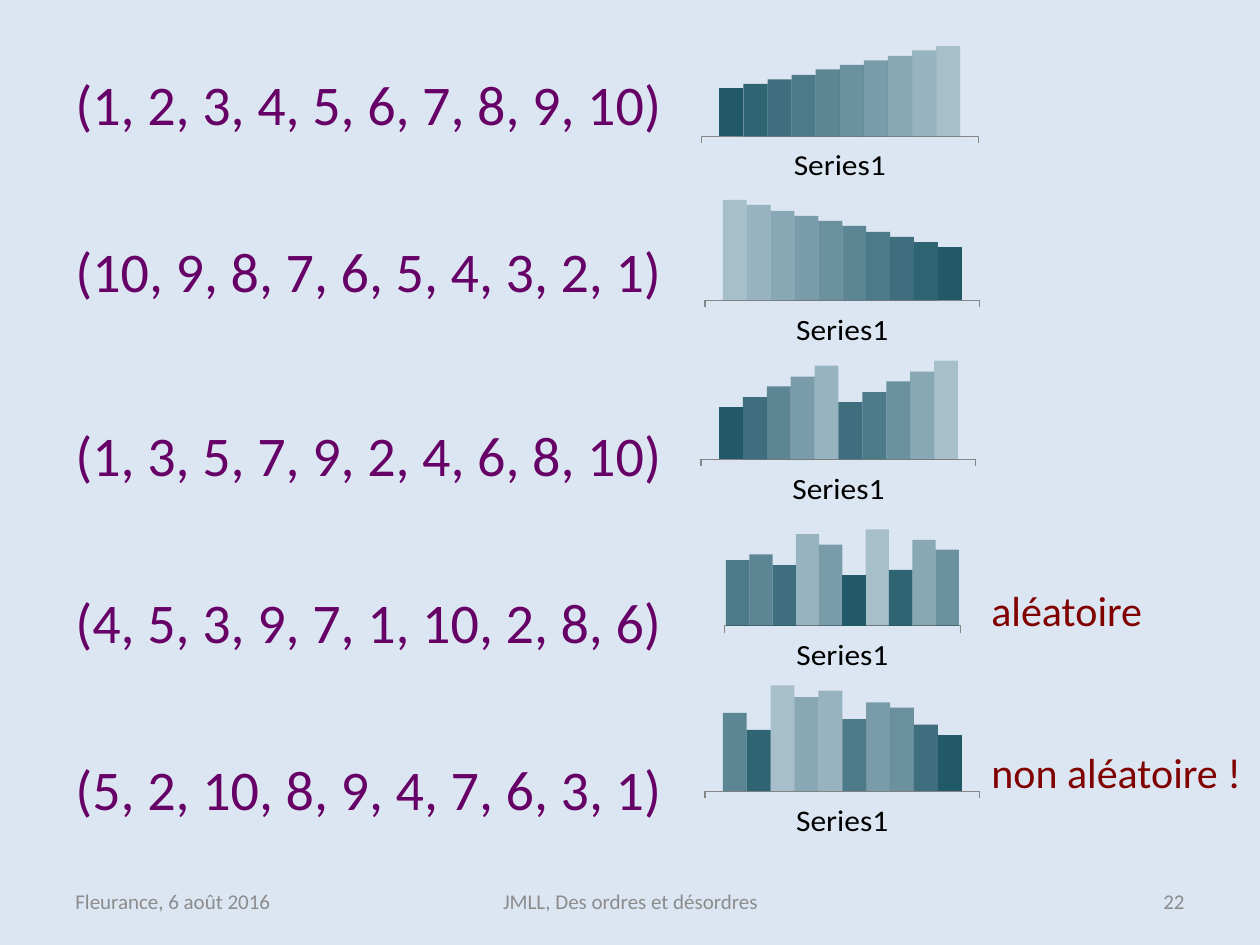
from lxml import etree
from pptx import Presentation
from pptx.chart.data import CategoryChartData
from pptx.dml.color import RGBColor
from pptx.enum.chart import XL_CHART_TYPE, XL_TICK_MARK
from pptx.enum.text import MSO_ANCHOR, PP_ALIGN
from pptx.oxml.ns import qn
from pptx.util import Inches, Pt

COLUMNS = XL_CHART_TYPE.COLUMN_CLUSTERED
TICK_OUT, TICK_NONE = XL_TICK_MARK.OUTSIDE, XL_TICK_MARK.NONE
TOP, MIDDLE = MSO_ANCHOR.TOP, MSO_ANCHOR.MIDDLE
LEFT, CENTER, RIGHT = PP_ALIGN.LEFT, PP_ALIGN.CENTER, PP_ALIGN.RIGHT

FONT = "Calibri"
PALE_BLUE, TEAL, AXIS_GRAY = "DCE6F2", "215968", "868686"
PURPLE, DARK_RED, FOOTER_GRAY, BLACK = "660066", "800000", "8C8C8C", "000000"

# Bar height for each rank from 1 to 10
HEIGHTS = [53, 58, 63, 68, 74, 79, 84, 89, 95, 100]

# Ranks, space above the line of text (points), chart position and size, gap width
ORDERS = [
    ([1, 2, 3, 4, 5, 6, 7, 8, 9, 10], 0, (5.44, 0.28, 2.33, 1.17), 150),
    ([10, 9, 8, 7, 6, 5, 4, 3, 2, 1], 57, (5.47, 1.54, 2.31, 1.22), 150),
    ([1, 3, 5, 7, 9, 2, 4, 6, 8, 10], 67, (5.44, 2.77, 2.31, 1.25), 150),
    ([4, 5, 3, 9, 7, 1, 10, 2, 8, 6], 57, (5.64, 4.11, 1.99, 1.23), 16),
    ([5, 2, 10, 8, 9, 4, 7, 6, 3, 1], 57, (5.47, 5.34, 2.31, 1.32), 150),
]


def color(value):
    return RGBColor.from_string(value)


def add_text(page, position, lines, size, ink, spaces=(0,), align=LEFT,
             anchor=TOP, wrap=True):
    """Add a text box; spaces holds the points above each line."""
    box = page.shapes.add_textbox(*map(Inches, position))
    frame = box.text_frame
    frame.word_wrap = wrap
    frame.vertical_anchor = anchor
    for index, (line, space) in enumerate(zip(lines, spaces)):
        para = frame.add_paragraph() if index else frame.paragraphs[0]
        para.alignment = align
        para.space_before = Pt(space)
        span = para.add_run()
        span.text = line
        span.font.name = FONT
        span.font.size = Pt(size)
        span.font.color.rgb = color(ink)


def fill_series(series, opacity):
    """Fill a series in teal with an opacity in percent."""
    fill = series.format.fill
    fill.solid()
    fill.fore_color.rgb = color(TEAL)
    if opacity < 100:
        for tint in series._element.iter(qn("a:srgbClr")):
            etree.SubElement(tint, qn("a:alpha"), val=str(opacity * 1000))


def place_plot(chart, **fractions):
    """Fix the inner plot area by fractions of the chart frame."""
    area = chart._chartSpace.chart.plotArea
    for old in area.findall(qn("c:layout")):
        area.remove(old)
    layout = etree.Element(qn("c:layout"))
    manual = etree.SubElement(layout, qn("c:manualLayout"))
    settings = {"layoutTarget": "inner", "xMode": "edge", "yMode": "edge", **fractions}
    for name, value in settings.items():
        etree.SubElement(manual, qn("c:" + name), val=str(value))
    area.insert(0, layout)


def add_rank_chart(page, position, ranks, gap, opacities, top, height):
    data = CategoryChartData()
    data.categories = ["Series1"]
    for number, rank in enumerate(ranks, 1):
        data.add_series(f"Series {number}", [HEIGHTS[rank - 1]])
    chart = page.shapes.add_chart(COLUMNS, *map(Inches, position), data).chart
    chart.has_title = False
    chart.has_legend = False
    chart.font.name = FONT
    chart.font.size = Pt(18)
    chart.font.color.rgb = color(BLACK)

    plot = chart.plots[0]
    plot.vary_by_categories = False
    plot.gap_width = gap
    plot.overlap = 0
    for series, opacity in zip(plot.series, opacities):
        fill_series(series, opacity)

    values = chart.value_axis
    values.minimum_scale, values.maximum_scale = 0, 100
    values.has_major_gridlines = False
    values.visible = False
    names = chart.category_axis
    names.major_tick_mark, names.minor_tick_mark = TICK_OUT, TICK_NONE
    names.format.line.color.rgb = color(AXIS_GRAY)
    names.format.line.width = Pt(0.75)
    place_plot(chart, x=0.054, y=top, w=0.946, h=height)


def main():
    deck = Presentation()
    deck.slide_width, deck.slide_height = Inches(10), Inches(7.5)
    page = deck.slides.add_slide(deck.slide_layouts[6])
    page.background.fill.solid()
    page.background.fill.fore_color.rgb = color(PALE_BLUE)

    footers = [
        ("Fleurance, 6 août 2016", 0.5, 2.33, LEFT),
        ("JMLL, Des ordres et désordres", 3.42, 3.17, CENTER),
        ("22", 7.17, 2.33, RIGHT),
    ]
    for words, left, width, align in footers:
        add_text(page, (left, 6.95, width, 0.4), [words], 12, FOOTER_GRAY,
                 align=align, anchor=MIDDLE)

    lines = ["(" + ", ".join(map(str, ranks)) + ")" for ranks, *_ in ORDERS]
    add_text(page, (0.5, 0.5, 4.9, 6.16), lines, 32, PURPLE,
             spaces=[space for _, space, *_ in ORDERS], wrap=False)

    for row, (ranks, _, position, gap) in enumerate(ORDERS):
        opacities = [108 - 8 * rank for rank in ranks]
        if row == 2:  # here rank 2 has the tint of rank 3
            opacities[ranks.index(2)] = 84
        top, height = (0.04, 0.7) if row == 1 else (0.08, 0.67)
        add_rank_chart(page, position, ranks, gap, opacities, top, height)

    add_text(page, (7.77, 4.59, 2.23, 1.82), ["aléatoire", "non aléatoire !"],
             24, DARK_RED, spaces=(0, 64))
    deck.save("out.pptx")


if __name__ == "__main__":
    main()
